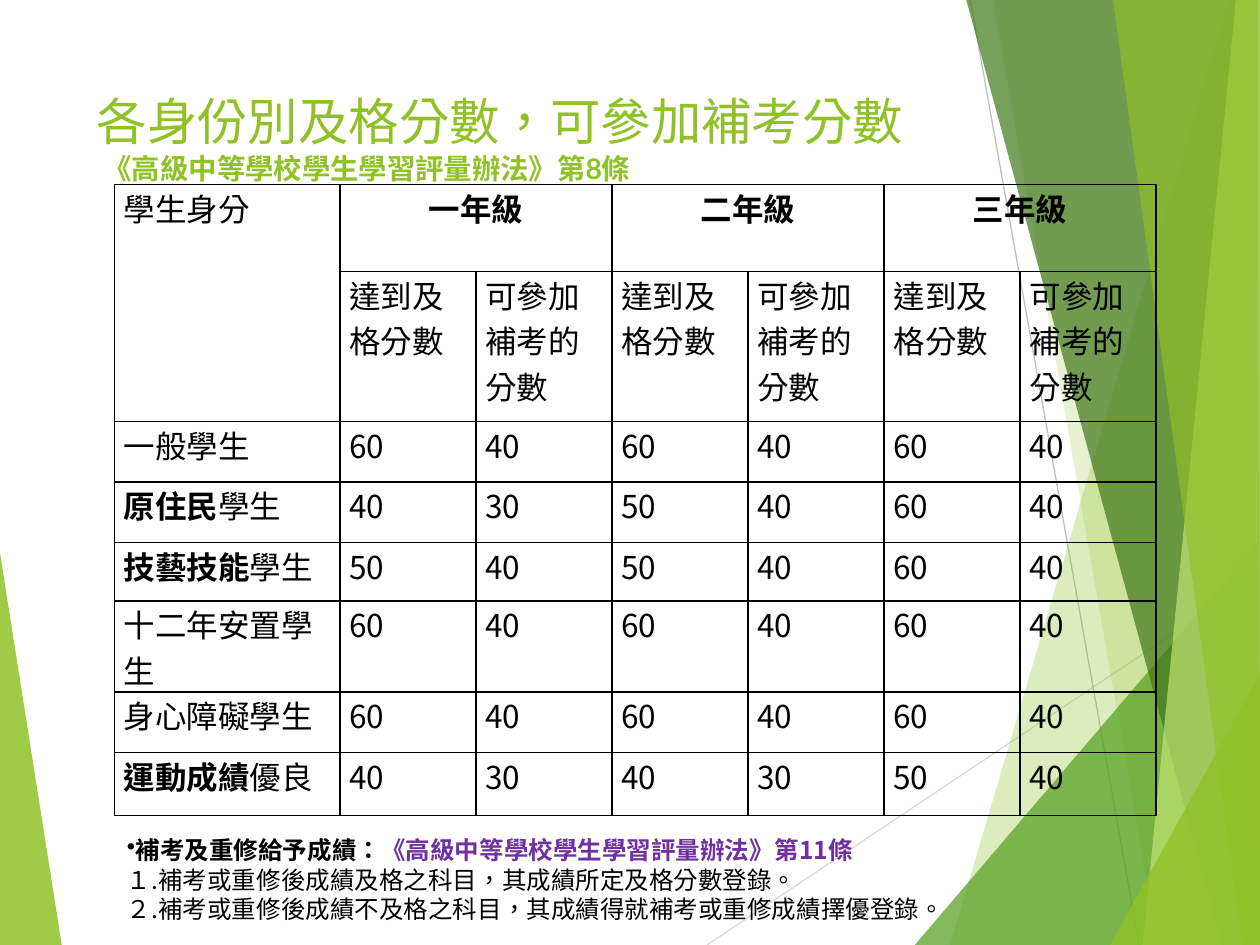
"""Build the slide on pass and make-up exam scores for each student status."""
from lxml import etree
from pptx import Presentation
from pptx.dml.color import RGBColor
from pptx.enum import lang, shapes, text
from pptx.oxml import ns
from pptx.util import Pt

COLOURS = {"lime": "90C226", "green": "54A021", "forest": "3F7819", "pale": "C0E474",
           "silver": "D9D9D9", "grey": "BFBFBF", "black": "000000", "purple": "7030A0"}


def add_xml(parent, tag, **attributes):
    return etree.SubElement(parent, ns.qn(tag), attributes)


def write(paragraph, runs, size, colour, latin, asian=None):
    paragraph.font.size = Pt(size)
    paragraph.font.name = latin
    for words, bold, *other in runs:
        run = paragraph.add_run()
        run.text = words
        run.font.size = Pt(size)
        run.font.name = latin
        run.font.bold = bold
        run.font.color.rgb = RGBColor.from_string(COLOURS[other[0] if other else colour])
        run.font.language_id = lang.MSO_LANGUAGE_ID.TRADITIONAL_CHINESE
        if asian:
            add_xml(run.font._element, "a:ea", typeface=asian)


deck = Presentation()
deck.slide_width, deck.slide_height = Pt(720), Pt(540)
slide = deck.slides.add_slide(deck.slide_layouts[6])

rays = [("silver", (404, 540), (720, 329)), ("grey", (554.5, 0), (651, 540))]
for colour, start, end in rays:
    ray = slide.shapes.add_connector(shapes.MSO_CONNECTOR.STRAIGHT, *map(Pt, start + end))
    ray.line.color.rgb = RGBColor.from_string(COLOURS[colour])
    ray.line.width = Pt(0.75)
    add_xml(ray._element.spPr, "a:effectLst")

facets = [
    ("lime", 85, [(0, 316), (35.3, 540), (0, 540)]),
    ("lime", 30, [(702, 0), (543, 540), (720, 540), (720, 0)]),
    ("lime", 20, [(567.4, 0), (661.7, 540), (720, 540), (720, 0)]),
    ("green", 72, [(522.7, 540), (720, 309), (720, 540)]),
    ("forest", 70, [(552.2, 0), (698.4, 540), (720, 540), (720, 0)]),
    ("pale", 70, [(706.3, 0), (653, 540), (720, 540), (720, 0)]),
    ("lime", 65, [(636, 0), (710, 540), (720, 540), (718.6, 0)]),
    ("lime", 80, [(634.3, 540), (720, 385.2), (720, 540)]),
]
for colour, opacity, corners in facets:
    outline = [(Pt(x), Pt(y)) for x, y in corners]
    builder = slide.shapes.build_freeform(*outline[0], scale=1.0)
    builder.add_line_segments(outline[1:], close=True)
    facet = builder.convert_to_shape()
    facet.shadow.inherit = False
    facet.line.fill.background()
    facet.fill.solid()
    facet.fill.fore_color.rgb = RGBColor.from_string(COLOURS[colour])
    tint = facet._element.spPr.find(".//" + ns.qn("a:srgbClr"))
    add_xml(tint, "a:alpha", val=str(opacity * 1000))

heading = slide.shapes.add_textbox(Pt(48.2), Pt(48.2), Pt(500), Pt(103.7)).text_frame
heading.word_wrap = True
title = heading.paragraphs[0]
write(title, [("各身份別及格分數，可參加補考分數", False)], 28.8, "lime", "Lato", "Lato")
title.add_line_break()
write(title, [(" 《高級中等學校學生學習評量辦法》第8條", True)], 16.2, "lime", "Lato", "Lato")

grades = ["一年級", "二年級", "三年級"]
students = [
    ("", "一般學生", [60, 40, 60, 40, 60, 40]),
    ("原住民", "學生", [40, 30, 50, 40, 60, 40]),
    ("技藝技能", "學生", [50, 40, 50, 40, 60, 40]),
    ("", "十二年安置學生", [60, 40, 60, 40, 60, 40]),
    ("", "身心障礙學生", [60, 40, 60, 40, 60, 40]),
    ("運動成績", "優良", [40, 30, 40, 30, 50, 40]),
]
row_heights = [49.7, 85.7, 34.6, 34.6, 33.4, 52, 34.6, 36]
column_widths = [129] + [77.75] * 6
frame = slide.shapes.add_table(len(row_heights), len(column_widths), Pt(65.3), Pt(105.5),
                               Pt(sum(column_widths)), Pt(sum(row_heights)))
scores = frame.table
scores.first_row = scores.horz_banding = False
for row, height in zip(scores.rows, row_heights):
    row.height = Pt(height)
for column, width in zip(scores.columns, column_widths):
    column.width = Pt(width)

for cell in scores.iter_cells():
    cell.margin_left = cell.margin_right = Pt(5.4)
    cell.margin_top = cell.margin_bottom = 0
    properties = cell._tc.get_or_add_tcPr()
    for side in ("a:lnL", "a:lnR", "a:lnT", "a:lnB"):
        border = add_xml(properties, side, w=str(Pt(1)))
        add_xml(add_xml(border, "a:solidFill"), "a:srgbClr", val=COLOURS["black"])
    cell.fill.background()

entries = {(0, 0): [("學生身分", False)]}
for i, grade in enumerate(grades):
    left = 1 + 2 * i
    entries[0, left] = [(grade, True)]
    entries[1, left] = [("達到及格分數", False)]
    entries[1, left + 1] = [("可參加補考的分數", False)]
    scores.cell(0, left).merge(scores.cell(0, left + 1))
    scores.cell(0, left).text_frame.paragraphs[0].alignment = text.PP_ALIGN.CENTER
scores.cell(0, 0).merge(scores.cell(1, 0))
for r, (emphasis, status, marks) in enumerate(students, 2):
    entries[r, 0] = [(emphasis, True), (status, False)] if emphasis else [(status, False)]
    for c, mark in enumerate(marks, 1):
        entries[r, c] = [(str(mark), False)]
for (r, c), runs in entries.items():
    latin = "Noto Sans CJK SC" if r > 1 and c > 0 else "Times New Roman"
    write(scores.cell(r, c).text_frame.paragraphs[0], runs, 18, "black", latin)

rules = slide.shapes.add_textbox(Pt(65.5), Pt(465.1), Pt(476), Pt(74.9)).text_frame
rules.word_wrap = True
rules.vertical_anchor = text.MSO_ANCHOR.MIDDLE
clauses = [
    [("補考及重修給予成績：", True), ("《高級中等學校學生學習評量辦法》第11條", True, "purple")],
    [("１.補考或重修後成績及格之科目，其成績所定及格分數登錄。", False)],
    [("２.補考或重修後成績不及格之科目，其成績得就補考或重修成績擇優登錄。", False)],
]
for i, clause in enumerate(clauses):
    paragraph = rules.add_paragraph() if i else rules.paragraphs[0]
    if i == 0:
        add_xml(paragraph._p.get_or_add_pPr(), "a:buChar", char="•")
    write(paragraph, clause, 14, "black", "Noto Sans CJK SC", "Lato")

deck.save("out.pptx")
